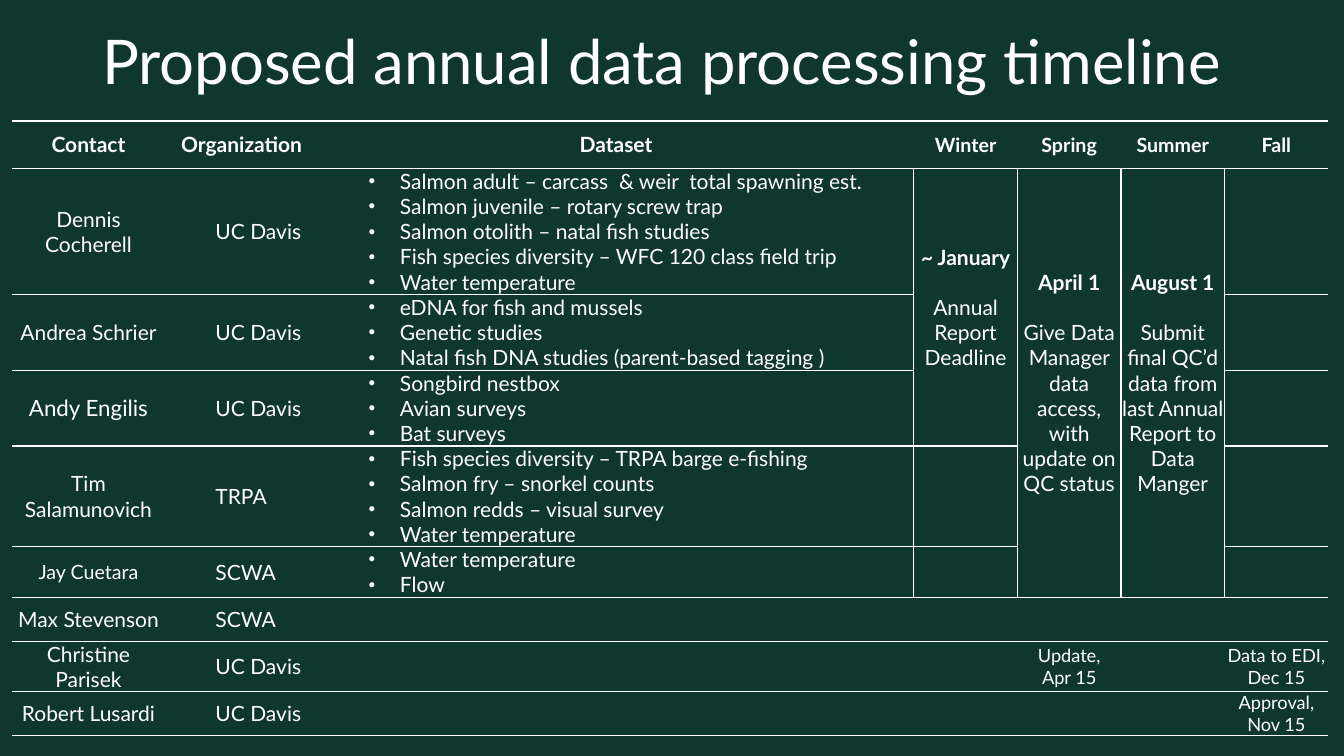
from lxml.etree import SubElement
from pptx import Presentation
from pptx.dml.color import RGBColor
from pptx.enum.text import MSO_ANCHOR, PP_ALIGN
from pptx.oxml.ns import qn
from pptx.util import Cm, Pt

PLAIN = "{2D5ABB26-0587-4C30-8999-92F81FD0307C}"  # table style without grid
WIDTHS = [3.86, 3.86, 15.01] + [2.61] * 4
HEIGHTS = [1.2, 3.17, 1.9, 1.9, 2.54, 1.27, 1.11, 1.27, 1.11]
HEADS = ["Contact", "Organization", "Dataset", "Winter", "Spring", "Summer", "Fall"]
WINTER, SPRING, SUMMER, FALL = range(3, 7)

# Contact, text size, organization, datasets
PEOPLE = [
    ("Dennis Cocherell", 15, "UC Davis", [
        "Salmon adult – carcass  & weir  total spawning est.",
        "Salmon juvenile – rotary screw trap",
        "Salmon otolith – natal fish studies",
        "Fish species diversity – WFC 120 class field trip",
        "Water temperature"]),
    ("Andrea Schrier", 15, "UC Davis", [
        "eDNA for fish and mussels",
        "Genetic studies",
        "Natal fish DNA studies (parent-based tagging )"]),
    ("Andy Engilis", 16, "UC Davis", [
        "Songbird nestbox", "Avian surveys", "Bat surveys"]),
    ("Tim Salamunovich", 15, "TRPA", [
        "Fish species diversity – TRPA barge e-fishing",
        "Salmon fry – snorkel counts",
        "Salmon redds – visual survey",
        "Water temperature"]),
    ("Jay Cuetara", 14, "SCWA", ["Water temperature", "Flow"]),
    ("Max Stevenson", 15, "SCWA", []),
    ("Christine Parisek", 15, "UC Davis", []),
    ("Robert Lusardi", 15, "UC Davis", []),
]

# Season column, last row of the merged cell, date, task
TASKS = [
    (WINTER, 3, "~ January", ["Annual Report", "Deadline"]),
    (SPRING, 5, "April 1",
     ["Give Data Manager data access,", "with update on QC status"]),
    (SUMMER, 5, "August 1",
     ["Submit final QC’d data from last Annual Report to Data Manger"]),
]

# Row, season column, lines
NOTES = [
    (7, SPRING, ["Update,", "Apr 15"]),
    (7, FALL, ["Data to EDI,", "Dec 15"]),
    (8, FALL, ["Approval, Nov 15"]),
]


def tint(code):
    return RGBColor.from_string(code)


class Deck:
    font, ink, ground = "Lato", "FFFFFF", "10372E"

    def __init__(self):
        self.show = Presentation()
        self.show.slide_width, self.show.slide_height = Cm(33.87), Cm(19.05)
        self.slide = self.show.slides.add_slide(self.show.slide_layouts[6])
        fill = self.slide.background.fill
        fill.solid()
        fill.fore_color.rgb = tint(self.ground)

    def text(self, frame, lines, size=15, bold=False, **form):
        """Fill a text frame, one paragraph a line, and return the paragraphs."""
        paras = []
        for i, line in enumerate(lines):
            para = frame.add_paragraph() if i else frame.paragraphs[0]
            for key, value in form.items():
                setattr(para, key, value)
            run = para.add_run()
            run.text = line
            look = {"name": self.font, "size": Pt(size), "bold": bold}
            for key, value in look.items():
                setattr(run.font, key, value)
            run.font.color.rgb = tint(self.ink)
            paras.append(para)
        return paras

    def center(self, cell, lines, size=15, bold=False):
        return self.text(cell.text_frame, lines, size, bold,
                         alignment=PP_ALIGN.CENTER)

    def indent(self, cell, lines, left, hang=0):
        """Set second-level lines, with bullets when they hang."""
        for para in self.text(cell.text_frame, lines, level=1):
            props = para._p.get_or_add_pPr()
            props.set("marL", str(Cm(left)))
            props.set("indent", str(-Cm(hang)))
            if hang:
                SubElement(props, qn("a:buSzPct"), val="90000")
                SubElement(props, qn("a:buFont"), typeface="Arial")
                SubElement(props, qn("a:buChar"), char="•")

    def title(self, text, left, top, width, height):
        box = self.slide.shapes.add_textbox(
            Cm(left), Cm(top), Cm(width), Cm(height))
        frame = box.text_frame
        frame.word_wrap = True
        frame.vertical_anchor = MSO_ANCHOR.MIDDLE
        self.text(frame, [text], 44, line_spacing=0.9)

    def table(self, left, top, widths, heights):
        frame = self.slide.shapes.add_table(
            len(heights), len(widths), Cm(left), Cm(top),
            Cm(sum(widths)), Cm(sum(heights)))
        grid = frame.table
        grid.first_row = grid.horz_banding = False
        grid._tbl.tblPr.find(qn("a:tableStyleId")).text = PLAIN
        for col, width in zip(grid.columns, widths):
            col.width = Cm(width)
        for row, height in zip(grid.rows, heights):
            row.height = Cm(height)
        return grid

    def dress(self, cell, sides):
        """Set margins, anchor and the borders named in sides (of L, R, T, B)."""
        for side in ("left", "right", "top", "bottom"):
            setattr(cell, "margin_" + side, 0)
        cell.vertical_anchor = MSO_ANCHOR.MIDDLE
        props = cell._tc.get_or_add_tcPr()
        for side in sides:
            line = SubElement(props, qn("a:ln" + side), w=str(Pt(1)))
            fill = SubElement(line, qn("a:solidFill"))
            SubElement(fill, qn("a:srgbClr"), val=self.ink)
        cell.fill.background()


def edges(row, col):
    """Name the borders of a cell; merged or joined cells have none between."""
    joined = {(5, WINTER)}
    for season, last, _, _ in TASKS:
        joined |= {(r, season) for r in range(2, last + 1)}
    sides = ""
    if 1 <= row <= 5:
        sides += "L" * (col >= WINTER) + "R" * (WINTER - 1 <= col < FALL)
    sides += "T" * ((row, col) not in joined)
    return sides + "B" * ((row + 1, col) not in joined)


def main():
    deck = Deck()
    deck.title("Proposed annual data processing timeline", 2.33, 0.48, 29.21, 2.31)
    grid = deck.table(0.3, 3.05, WIDTHS, HEIGHTS)
    for row in range(len(HEIGHTS)):
        for col in range(len(WIDTHS)):
            deck.dress(grid.cell(row, col), edges(row, col))
    for col, head in enumerate(HEADS):
        deck.center(grid.cell(0, col), [head], 14 if col >= WINTER else 15, True)
    for row, (name, size, group, data) in enumerate(PEOPLE, 1):
        deck.center(grid.cell(row, 0), [name], size)
        deck.indent(grid.cell(row, 1), [group], 1.27)
        deck.indent(grid.cell(row, 2), data, 2.06, 0.79)
    for col, last, date, task in TASKS:
        cell = grid.cell(1, col)
        cell.merge(grid.cell(last, col))
        first = deck.center(cell, [date, *task])[0]
        first.runs[0].font.bold = True
        first.space_after = Pt(18)
    for row, col, lines in NOTES:
        deck.center(grid.cell(row, col), lines, 13)
    deck.show.save("out.pptx")


if __name__ == "__main__":
    main()
